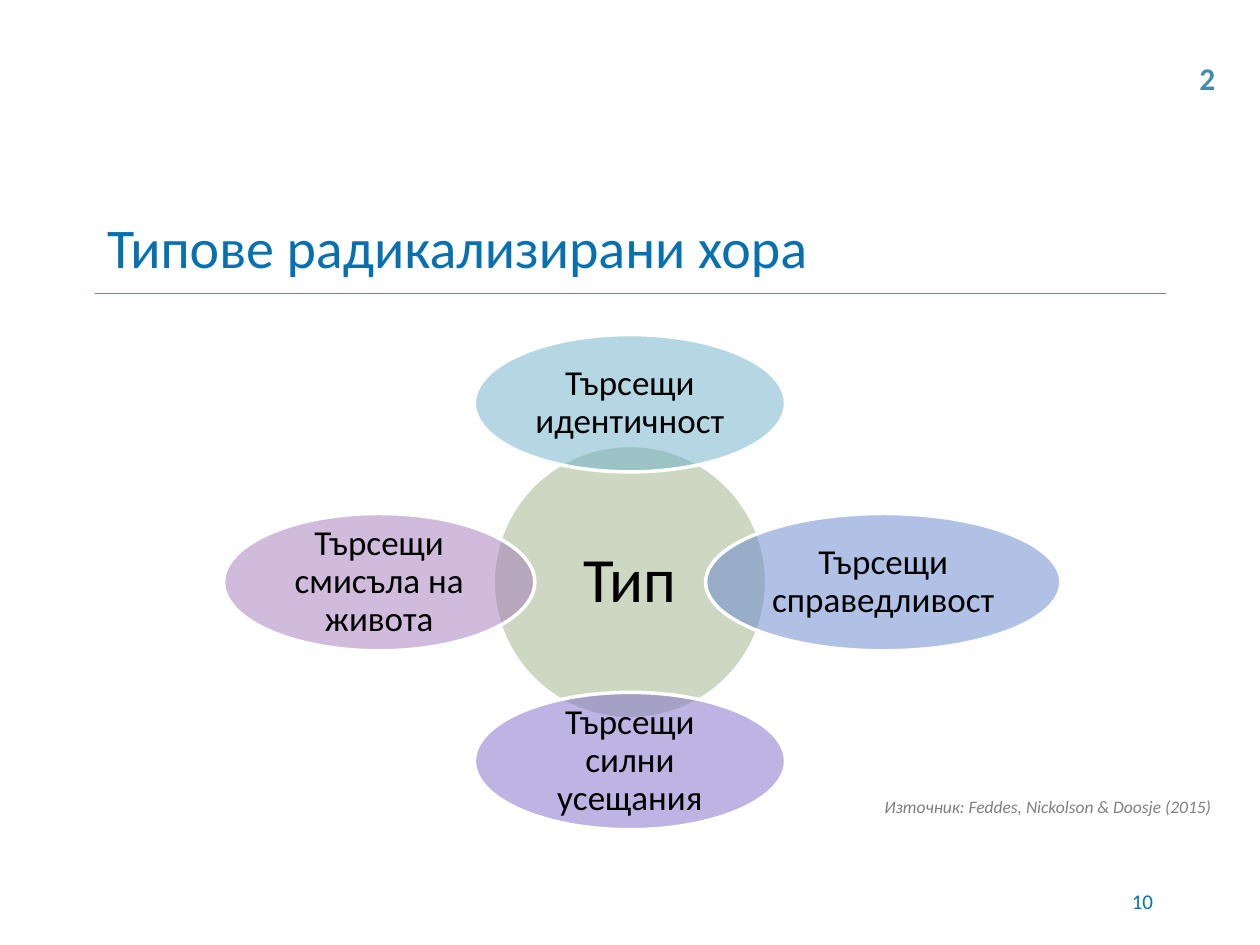
from lxml.etree import SubElement
from pptx import Presentation
from pptx.dml.color import RGBColor
from pptx.enum.shapes import MSO_CONNECTOR, MSO_SHAPE
from pptx.enum.text import MSO_ANCHOR, PP_ALIGN
from pptx.oxml.ns import qn
from pptx.util import Inches, Pt

BLUE = RGBColor(0x07, 0x70, 0xB1)
CYAN = RGBColor(0x0B, 0xA7, 0xDF)
TEAL = RGBColor(0x3E, 0x8E, 0xA9)
GRAY = RGBColor(0x80, 0x80, 0x80)
BLACK = RGBColor(0, 0, 0)
WHITE = RGBColor(0xFF, 0xFF, 0xFF)
GREEN = RGBColor(0x9C, 0xB0, 0x84)

MID_X, MID_Y = 5, 4.62
HUB = 2.17
HIGH = 1.09
REACH = 1.42
TYPES = [
    ("Търсещи идентичност", 0, -REACH, 2.47, RGBColor(0x6B, 0xB1, 0xC9)),
    ("Търсещи справедливост", 2.01, 0, 2.82, RGBColor(0x65, 0x85, 0xCF)),
    ("Търсещи силни усещания", 0, REACH, 2.47, RGBColor(0x7E, 0x6B, 0xC9)),
    ("Търсещи смисъла на живота", -1.99, 0, 2.47, RGBColor(0xA3, 0x79, 0xBB)),
]


def write(frame, text, size=12, color=BLACK, align=PP_ALIGN.LEFT,
          anchor=MSO_ANCHOR.TOP, bold=False, italic=False, wrap=True,
          inset=None, spacing=None):
    frame.word_wrap = wrap
    frame.vertical_anchor = anchor
    if inset is not None:
        frame.margin_left = frame.margin_right = Inches(inset)
        frame.margin_top = frame.margin_bottom = Inches(inset)
    para = frame.paragraphs[0]
    para.alignment = align
    if spacing:
        para.line_spacing = spacing
    run = para.add_run()
    run.text = text
    font = run.font
    font.name = "Calibri"
    font.size = Pt(size)
    font.bold = bold
    font.italic = italic
    font.color.rgb = color


def add_title(slide, text):
    title = slide.shapes.title
    title.left, title.top = Inches(0.75), Inches(1.58)
    title.width, title.height = Inches(8.5), Inches(0.75)
    write(title.text_frame, text, size=32, color=BLUE, anchor=MSO_ANCHOR.MIDDLE)


def add_rule(slide):
    rule = slide.shapes.add_connector(
        MSO_CONNECTOR.STRAIGHT, Inches(0.75), Inches(2.33), Inches(9.25), Inches(2.33))
    rule.line.color.rgb = CYAN
    rule.line.width = Pt(0.75)
    SubElement(rule.element.spPr, qn("a:effectLst"))


def add_text(slide, text, left, top, width, height, **style):
    box = slide.shapes.add_textbox(
        Inches(left), Inches(top), Inches(width), Inches(height))
    write(box.text_frame, text, **style)


def add_oval(slide, text, dx, dy, width, height, color, size=20, inset=0.03):
    oval = slide.shapes.add_shape(
        MSO_SHAPE.OVAL, Inches(MID_X + dx - width / 2),
        Inches(MID_Y + dy - height / 2), Inches(width), Inches(height))
    oval.shadow.inherit = False
    oval.fill.solid()
    oval.fill.fore_color.rgb = color
    tint = oval.element.spPr.find(qn("a:solidFill")).find(qn("a:srgbClr"))
    SubElement(tint, qn("a:alpha"), val="50000")
    oval.line.color.rgb = WHITE
    oval.line.width = Pt(2)
    write(oval.text_frame, text, size=size, align=PP_ALIGN.CENTER,
          anchor=MSO_ANCHOR.MIDDLE, inset=inset, spacing=0.9)


def main():
    deck = Presentation()
    deck.slide_width, deck.slide_height = Inches(10), Inches(7.5)
    slide = deck.slides.add_slide(deck.slide_layouts[5])
    add_rule(slide)
    add_title(slide, "Типове радикализирани хора")
    add_text(slide, "10", 7.17, 6.95, 2.08, 0.4, color=BLUE,
             align=PP_ALIGN.RIGHT, anchor=MSO_ANCHOR.MIDDLE)
    add_oval(slide, "Тип", 0, 0, HUB, HUB, GREEN, size=36, inset=0.05)
    for text, dx, dy, width, color in TYPES:
        add_oval(slide, text, dx, dy, width, HIGH, color)
    add_text(slide, "Източник: Feddes, Nickolson & Doosje (2015)",
             6.92, 6.27, 3.12, 0.27, size=10, color=GRAY, italic=True)
    add_text(slide, "2", 9.42, 0.42, 0.33, 0.4, size=18, color=TEAL,
             bold=True, wrap=False)
    deck.save("out.pptx")


if __name__ == "__main__":
    main()
